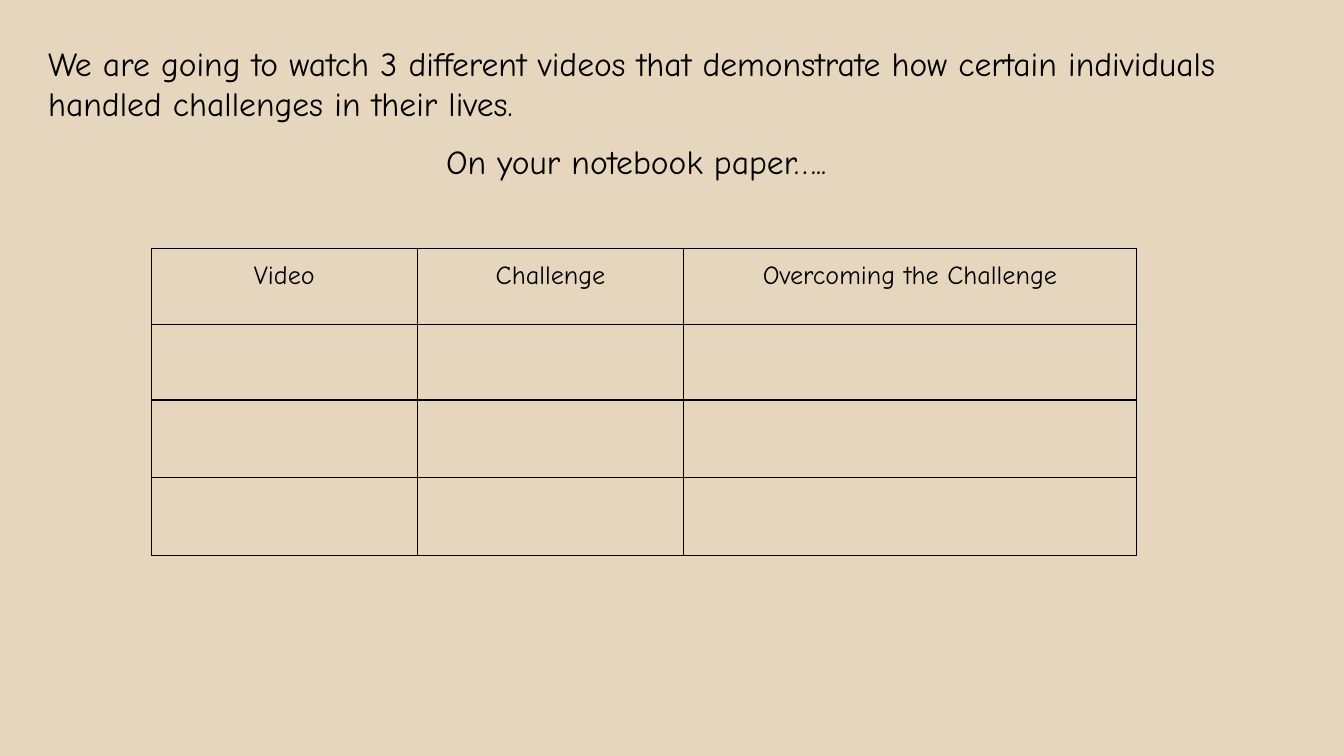
from lxml import etree
from pptx import Presentation
from pptx.dml.color import RGBColor
from pptx.enum import text
from pptx.oxml import ns
from pptx.util import Cm, Pt

FONT = "Comic Neue"
INK = "000000"
BACKGROUND = "E6D6BD"
MARGIN = 0.25

INSTRUCTIONS = [
    ("On your notebook paper…..", (4.06, 2.41, 15.93, 9.47),
     text.PP_ALIGN.CENTER, text.MSO_ANCHOR.TOP),
    ("We are going to watch 3 different videos that demonstrate how certain "
     "individuals handled challenges in their lives.", (0.66, -0.58, 23.37, 4.29),
     text.PP_ALIGN.LEFT, text.MSO_ANCHOR.MIDDLE),
]
HEADERS = ["Video", "Challenge", "Overcoming the Challenge"]
TABLE_ORIGIN = (2.86, 4.69)
COLUMN_WIDTHS = [5.03, 5.03, 8.56]
ROW_HEIGHTS = [1.45, 1.42, 1.47, 1.47]


def color(value):
    return RGBColor.from_string(value)


def set_margins(target):
    for side in ("left", "right", "top", "bottom"):
        setattr(target, f"margin_{side}", Cm(MARGIN))


def write(frame, words, size, alignment):
    paragraph = frame.paragraphs[0]
    paragraph.text = words
    paragraph.alignment = alignment
    paragraph.font.name = FONT
    paragraph.font.size = Pt(size)
    paragraph.font.color.rgb = color(INK)


def add_instruction(slide, words, box, alignment, anchor):
    frame = slide.shapes.add_textbox(*map(Cm, box)).text_frame
    frame.word_wrap = True
    frame.vertical_anchor = anchor
    set_margins(frame)
    write(frame, words, 18, alignment)


def set_borders(cell):
    properties = cell._tc.get_or_add_tcPr()
    for position, side in enumerate(("lnL", "lnR", "lnT", "lnB")):
        line = etree.Element(ns.qn(f"a:{side}"), w=str(Pt(0.75)))
        fill = etree.SubElement(line, ns.qn("a:solidFill"))
        etree.SubElement(fill, ns.qn("a:srgbClr"), val=INK)
        properties.insert(position, line)


def add_challenge_table(slide):
    size = (sum(COLUMN_WIDTHS), sum(ROW_HEIGHTS))
    table = slide.shapes.add_table(
        len(ROW_HEIGHTS), len(COLUMN_WIDTHS), *map(Cm, TABLE_ORIGIN + size)).table
    table.first_row = False
    table.horz_banding = False
    for column, width in zip(table.columns, COLUMN_WIDTHS):
        column.width = Cm(width)
    for row, height in zip(table.rows, ROW_HEIGHTS):
        row.height = Cm(height)
    for cell in table.iter_cells():
        cell.fill.background()
        set_margins(cell)
        set_borders(cell)
    for cell, header in zip(table.rows[0].cells, HEADERS):
        write(cell.text_frame, header, 14, text.PP_ALIGN.CENTER)


def main():
    presentation = Presentation()
    presentation.slide_width = Cm(25.4)
    presentation.slide_height = Cm(14.29)
    slide = presentation.slides.add_slide(presentation.slide_layouts[6])
    slide.background.fill.solid()
    slide.background.fill.fore_color.rgb = color(BACKGROUND)
    notebook, introduction = INSTRUCTIONS
    add_instruction(slide, *notebook)
    add_challenge_table(slide)
    add_instruction(slide, *introduction)
    presentation.save("out.pptx")


if __name__ == "__main__":
    main()
